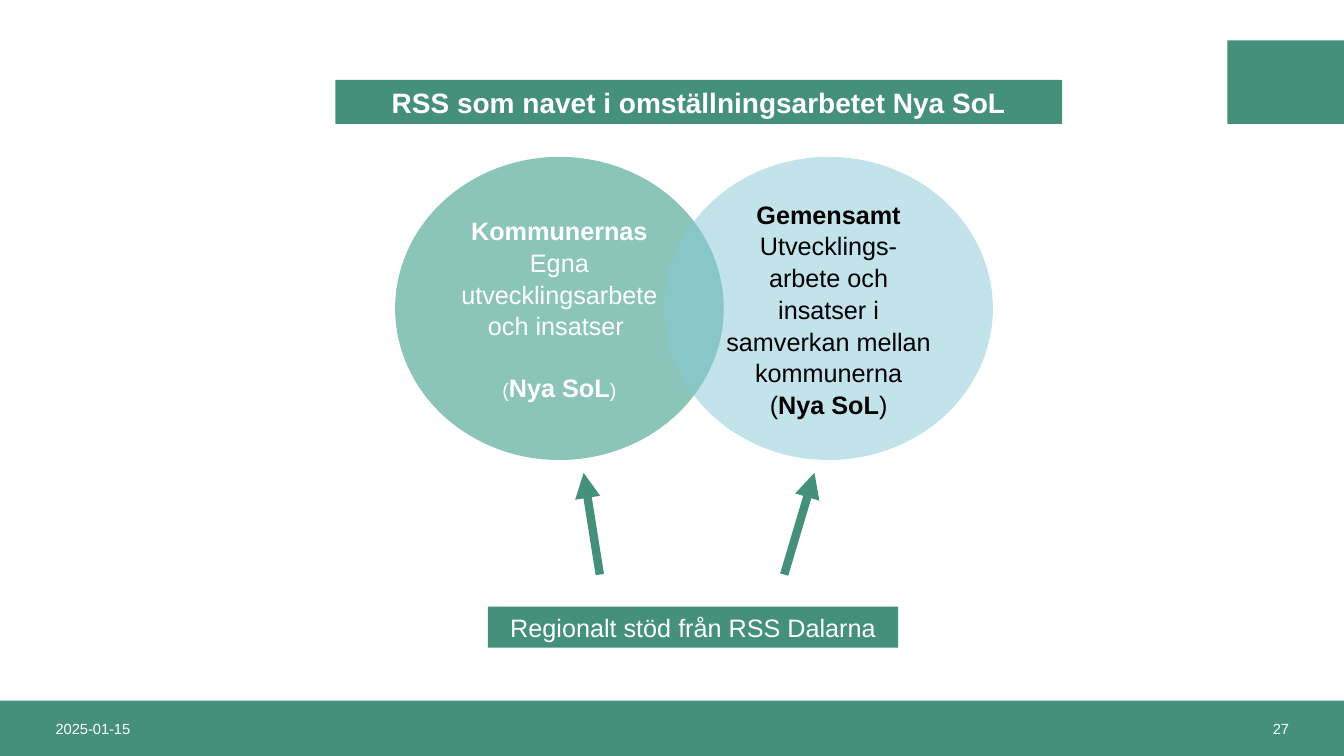
import pptx
import pptx.dml.color
import pptx.enum.shapes
import pptx.enum.text
import pptx.oxml
import pptx.oxml.ns
import pptx.util

SHAPE = pptx.enum.shapes.MSO_SHAPE
ALIGN = pptx.enum.text.PP_ALIGN
GREEN, WHITE, BLACK = "45907A", "FFFFFF", "000000"

deck = pptx.Presentation()
deck.slide_width = pptx.util.Inches(13.333)
deck.slide_height = pptx.util.Inches(7.5)
slide = deck.slides.add_slide(deck.slide_layouts[5])


def share(*percents):
    """Turn alternating x and y percentages of the slide into lengths."""
    sides = (deck.slide_width, deck.slide_height)
    return [round(sides[i % 2] * p / 100) for i, p in enumerate(percents)]


def write(shape, paragraphs, size, color, align=ALIGN.CENTER, spacing=1.0):
    """Fill a shape with paragraphs, each a list of (text, font changes) runs."""
    frame = shape.text_frame
    frame_format = {
        "word_wrap": True,
        "auto_size": pptx.enum.text.MSO_AUTO_SIZE.NONE,
        "vertical_anchor": pptx.enum.text.MSO_ANCHOR.MIDDLE,
    }
    for name, value in frame_format.items():
        setattr(frame, name, value)
    for i, runs in enumerate(paragraphs):
        paragraph = frame.add_paragraph() if i else frame.paragraphs[0]
        paragraph.alignment, paragraph.line_spacing = align, spacing
        for text, changes in runs:
            run = paragraph.add_run()
            run.text = text
            font_format = {"name": "Arial", "size": pptx.util.Pt(size), "bold": False}
            for name, value in (font_format | changes).items():
                setattr(run.font, name, value)
            run.font.color.rgb = pptx.dml.color.RGBColor.from_string(color)


BOLD = {"bold": True}
SMALL = {"size": pptx.util.Pt(14)}

# Filled shapes, back to front: kind, place, colour
areas = {
    "footer": (SHAPE.RECTANGLE, (0, 92.67, 100, 7.33), GREEN),
    "corner": (SHAPE.RECTANGLE, (91.33, 5.33, 8.67, 11.07), GREEN),
    "own": (SHAPE.OVAL, (29.4, 20.75, 24.45, 40.1), "8BC5BA"),
    "support": (SHAPE.RECTANGLE, (36.3, 80.25, 30.53, 5.4), GREEN),
    "joint": (SHAPE.OVAL, (49.43, 20.75, 24.45, 40.1), "87C8D7"),
}
drawn = {}
for part, (kind, place, color) in areas.items():
    area = slide.shapes.add_shape(kind, *share(*place))
    area.shadow.inherit = False
    area.fill.solid()
    area.fill.fore_color.rgb = pptx.dml.color.RGBColor.from_string(color)
    area.line.fill.background()
    drawn[part] = area

joint_color = drawn["joint"].fill._xPr.find(".//" + pptx.oxml.ns.qn("a:srgbClr"))
joint_color.append(pptx.oxml.parse_xml(
    f'<a:alpha {pptx.oxml.ns.nsdecls("a")} val="50000"/>'))

write(drawn["own"], [
    [("Kommunernas", BOLD)],
    [("Egna utvecklingsarbete och insatser ", {})],
    [("(", SMALL), ("Nya SoL", BOLD), (")", SMALL)],
], 18, WHITE, spacing=1.05)
drawn["own"].text_frame.paragraphs[-1].space_before = pptx.util.Pt(21.6)

write(drawn["joint"], [
    [("Gemensamt", BOLD)],
    [("Utvecklings-", {})],
    [("arbete och insatser i samverkan mellan kommunerna", {})],
    [("(", {}), ("Nya SoL", BOLD), (")", {})],
], 18, BLACK, spacing=1.05)

write(drawn["support"], [[("Regionalt stöd från RSS Dalarna", {})]], 18, WHITE)

heading = slide.shapes.title
heading.left, heading.top, heading.width, heading.height = share(24.95, 10.55, 54.08, 5.85)
heading.fill.solid()
heading.fill.fore_color.rgb = pptx.dml.color.RGBColor.from_string(GREEN)
write(heading, [[("RSS som navet i omställningsarbetet Nya SoL", BOLD)]], 20, WHITE)

for left, text, align in ((3.4, "2025-01-15", ALIGN.LEFT), (70.65, "27", ALIGN.RIGHT)):
    note = slide.shapes.add_textbox(*share(left, 92.67, 26, 7.33))
    write(note, [[(text, {})]], 10.5, WHITE, align)

# Arrows from the regional support up to the two circles
for start, end in ((44.63, 43.43), (58.35, 60.6)):
    arrow = slide.shapes.add_connector(
        pptx.enum.shapes.MSO_CONNECTOR.STRAIGHT, *share(start, 76, end, 62.55))
    arrow.line.width = pptx.util.Pt(6)
    arrow.line.color.rgb = pptx.dml.color.RGBColor.from_string(GREEN)
    arrow.line._get_or_add_ln().append(pptx.oxml.parse_xml(
        f'<a:tailEnd {pptx.oxml.ns.nsdecls("a")} type="triangle"/>'))
    arrow._element.spPr.append(pptx.oxml.parse_xml(
        f'<a:effectLst {pptx.oxml.ns.nsdecls("a")}/>'))

deck.save("out.pptx")
